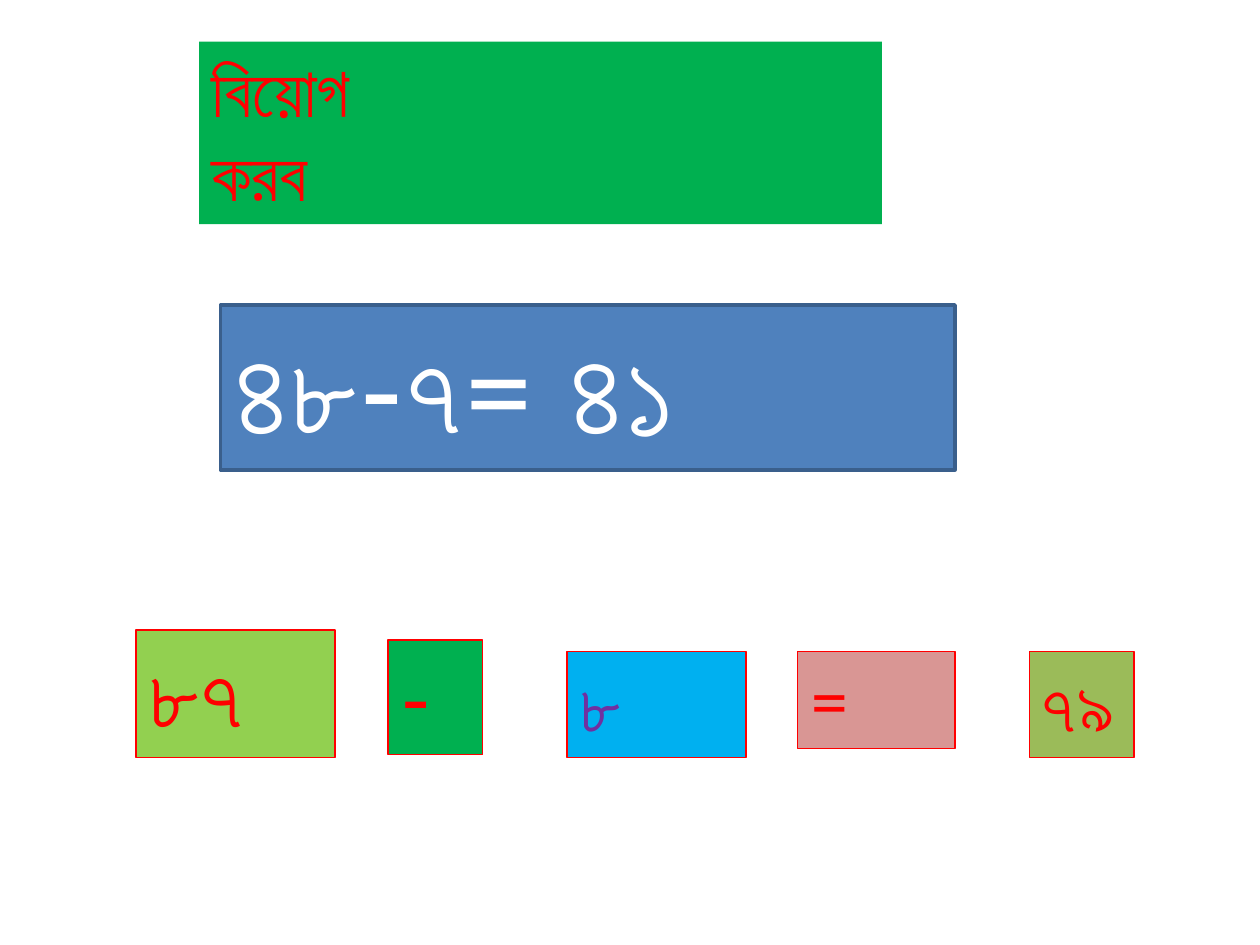
from pptx import Presentation
from pptx.dml.color import RGBColor
from pptx.enum.shapes import MSO_SHAPE
from pptx.enum.text import MSO_ANCHOR, MSO_AUTO_SIZE, PP_ALIGN
from pptx.util import Inches, Pt

RECTANGLE = MSO_SHAPE.RECTANGLE
TOP = MSO_ANCHOR.TOP
LEFT = PP_ALIGN.LEFT
GROW = MSO_AUTO_SIZE.SHAPE_TO_FIT_TEXT
RED = "FF0000"


def rgb(value):
    return RGBColor.from_string(value)


def add_box(words, box, fill, size, color=RED, font="Lato", line=RED, weight=0.75):
    card = slide.shapes.add_shape(RECTANGLE, *[Inches(n) for n in box])
    card.shadow.inherit = False
    card.fill.solid()
    card.fill.fore_color.rgb = rgb(fill)
    if line:
        card.line.color.rgb = rgb(line)
        card.line.width = Pt(weight)
    else:
        card.line.fill.background()
    frame = card.text_frame
    frame.text = words
    frame.word_wrap = True
    frame.auto_size = GROW
    frame.vertical_anchor = TOP
    for paragraph in frame.paragraphs:
        paragraph.alignment = LEFT
        for run in paragraph.runs:
            run.font.name = font
            run.font.size = Pt(size)
            run.font.color.rgb = rgb(color)


prs = Presentation()
prs.slide_width = Inches(10)
prs.slide_height = Inches(7.5)
slide = prs.slides.add_slide(prs.slide_layouts[6])

# Heading
add_box("বিয়োগ\nকরব", (1.58, 0.33, 5.42, 1.45), "00B050", 40, font="Calibri", line=None)

# Worked subtraction
add_box("৪৮-৭= ৪১", (1.75, 2.42, 5.83, 1.31), "4F81BD", 72,
        color="FFFFFF", line="3A5F8C", weight=2)

# Second subtraction, one box for each term
terms = [
    ("৮৭", (1.08, 5, 1.58, 1.01), "92D050", 54, RED),
    ("-", (3.08, 5.08, 0.75, 0.91), "00B050", 48, RED),
    ("৮", (4.5, 5.17, 1.42, 0.84), "00B0F0", 44, "7030A0"),
    ("=", (6.33, 5.17, 1.25, 0.77), "D99694", 40, RED),
    ("৭৯", (8.17, 5.17, 0.83, 0.84), "9BBB59", 44, RED),
]
for term, box, fill, size, color in terms:
    add_box(term, box, fill, size, color)

prs.save("out.pptx")
